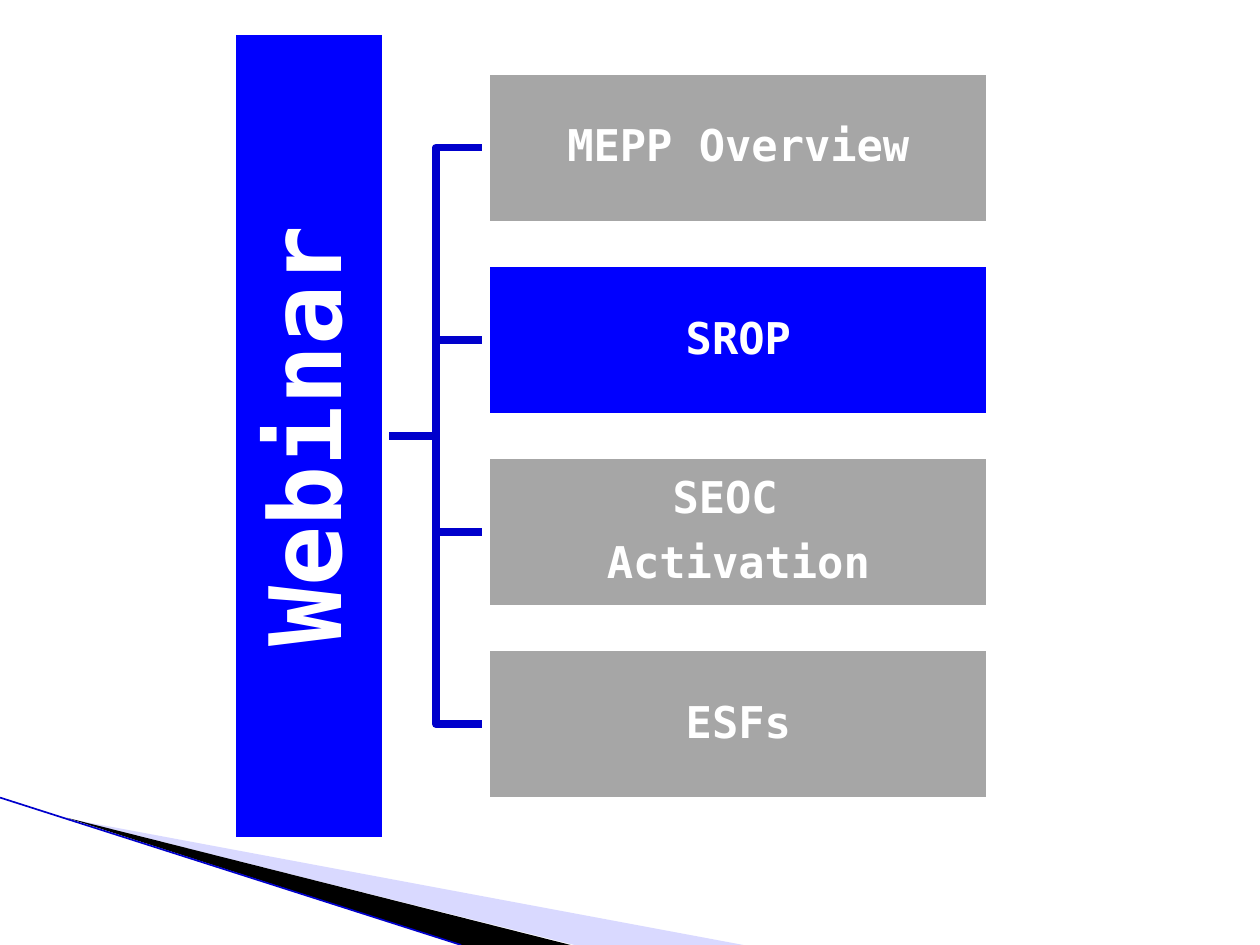
from lxml.etree import SubElement
from pptx import Presentation
from pptx.dml.color import RGBColor
from pptx.enum.shapes import MSO_CONNECTOR, MSO_SHAPE
from pptx.enum.text import MSO_ANCHOR, PP_ALIGN
from pptx.oxml.ns import qn
from pptx.util import Inches, Pt

TITLE = "Webinar"
TOPICS = [
    (["MEPP Overview"], "gray"),
    (["SROP"], "blue"),
    (["SEOC ", "Activation"], "gray"),
    (["ESFs"], "gray"),
]
SWEEPS = [
    ([(0.55, 6.5), (5.9, 7.5), (4.56, 7.5)], "pale", 40),
    ([(0.53, 6.49), (4.53, 7.5), (3.66, 7.5)], "black", 100),
]
EDGE = [(0, 6.33), (3.66, 7.5)]
THEME = {
    "colors": {"blue": "0000FF", "gray": "A6A6A6", "white": "FFFFFF",
               "line": "0000CC", "pale": "A2A2FF", "black": "000000"},
    "font": {"name": "DejaVu Sans Mono", "bold": True},
    "para": {"alignment": PP_ALIGN.CENTER, "line_spacing": 0.9},
    "title": 57, "topic": 25, "after": 0.4, "stroke": 4.33, "thin": 0.95,
}
SIDES = ("margin_left", "margin_top", "margin_right", "margin_bottom")
MID, LONG, WIDE, HIGH, STEP = 3.46, 6.42, 4, 1.22, 1.525
LEFT, STEM, BEND = 3.06, 3.46, 3.86


def color(name):
    """Return the theme color of this name."""
    return RGBColor.from_string(THEME["colors"][name])


def put(item, values):
    """Set each format value on the item."""
    for key, value in values.items():
        setattr(item, key, value)


def stroke(line, name, width):
    """Give a line its color and width."""
    line.color.rgb = color(name)
    line.width = Pt(width)


def trace(shapes, points, close):
    """Draw a freeform through points given in inches."""
    first, *rest = [(Inches(x), Inches(y)) for x, y in points]
    pen = shapes.build_freeform(*first)
    pen.add_line_segments(rest, close=close)
    shape = pen.convert_to_shape()
    shape.shadow.inherit = False
    return shape


def sweep(shapes, points, name, alpha):
    """Draw one filled sweep at the foot of the slide."""
    shape = trace(shapes, points, True)
    shape.fill.solid()
    shape.fill.fore_color.rgb = color(name)
    shape.line.fill.background()
    if alpha < 100:
        tint = shape.fill._xPr.find(".//" + qn("a:srgbClr"))
        SubElement(tint, qn("a:alpha"), val=str(alpha * 1000))


def edge(shapes):
    """Draw the thin line along the sweeps."""
    (x1, y1), (x2, y2) = EDGE
    line = shapes.add_connector(MSO_CONNECTOR.STRAIGHT, Inches(x1),
                                Inches(y1), Inches(x2), Inches(y2))
    stroke(line.line, "line", THEME["thin"])
    SubElement(line._element.spPr, qn("a:effectLst"))


def branch(shapes, y):
    """Draw the elbow from the title to a topic."""
    points = [(LEFT, MID), (STEM, MID), (STEM, y), (BEND, y)]
    shape = trace(shapes, points, False)
    shape.fill.background()
    stroke(shape.line, "line", THEME["stroke"])


def box(shapes, center, width, lines, fill, size, pad, turn=0):
    """Draw a labeled box around its center."""
    x, y = center
    shape = shapes.add_shape(
        MSO_SHAPE.RECTANGLE, Inches(x - width / 2), Inches(y - HIGH / 2),
        Inches(width), Inches(HIGH))
    shape.rotation = turn
    shape.shadow.inherit = False
    shape.fill.solid()
    shape.fill.fore_color.rgb = color(fill)
    stroke(shape.line, "white", THEME["stroke"])
    frame = shape.text_frame
    put(frame, {"word_wrap": True, "vertical_anchor": MSO_ANCHOR.MIDDLE})
    put(frame, dict.fromkeys(SIDES, Inches(pad)))
    for i, text in enumerate(lines):
        para = frame.add_paragraph() if i else frame.paragraphs[0]
        run = para.add_run()
        run.text = text
        put(para, {**THEME["para"], "space_after": Pt(size * THEME["after"])})
        put(run.font, {**THEME["font"], "size": Pt(size)})
        run.font.color.rgb = color("white")


def main():
    """Build the slide and save it."""
    deck = Presentation()
    put(deck, {"slide_width": Inches(10), "slide_height": Inches(7.5)})
    shapes = deck.slides.add_slide(deck.slide_layouts[6]).shapes
    for item in SWEEPS:
        sweep(shapes, *item)
    edge(shapes)
    rows = [MID + (i - (len(TOPICS) - 1) / 2) * STEP
            for i in range(len(TOPICS))]
    for y in reversed(rows):
        branch(shapes, y)
    box(shapes, (LEFT - HIGH / 2, MID), LONG, [TITLE], "blue",
        THEME["title"], 0.04, 270)
    for y, (lines, fill) in zip(rows, TOPICS):
        box(shapes, (BEND + WIDE / 2, y), WIDE, lines, fill,
            THEME["topic"], 0.02)
    deck.save("out.pptx")


if __name__ == "__main__":
    main()
